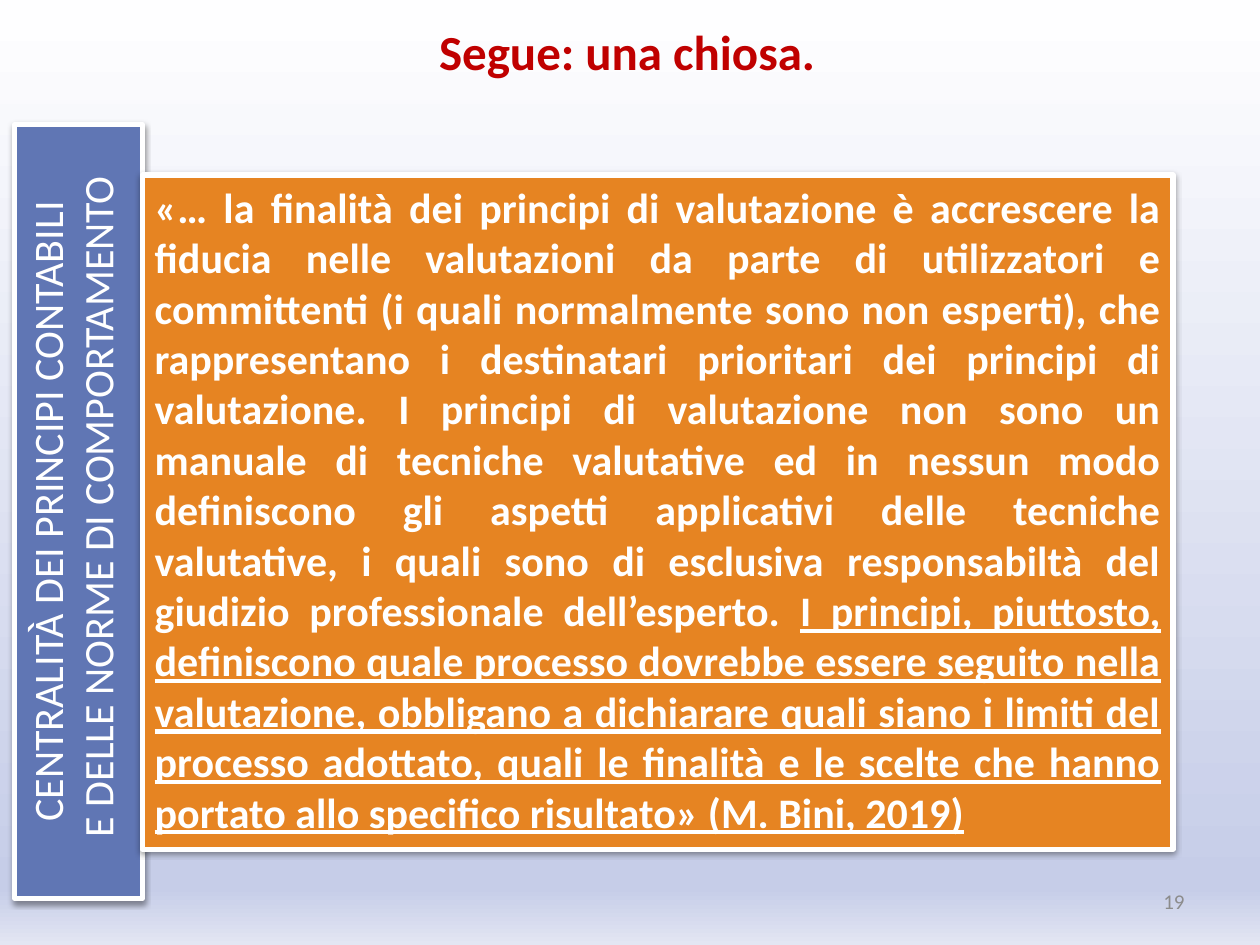
import pptx
import pptx.dml.color
import pptx.enum.shapes
import pptx.enum.text
import pptx.oxml
import pptx.oxml.ns
import pptx.util

Cm = pptx.util.Cm
Pt = pptx.util.Pt
Align = pptx.enum.text.PP_ALIGN
Anchor = pptx.enum.text.MSO_ANCHOR
Fit = pptx.enum.text.MSO_AUTO_SIZE
NS = pptx.oxml.ns.nsdecls("a")

QUOTE = (
    "«… la finalità dei principi di valutazione è accrescere la fiducia nelle "
    "valutazioni da parte di utilizzatori e committenti (i quali normalmente "
    "sono non esperti), che rappresentano i destinatari prioritari dei principi "
    "di valutazione. I principi di valutazione non sono un manuale di tecniche "
    "valutative ed in nessun modo definiscono gli aspetti applicativi delle "
    "tecniche valutative, i quali sono di esclusiva responsabiltà del giudizio "
    "professionale dell’esperto. "
)
STRESS = (
    "I principi, piuttosto, definiscono quale processo dovrebbe essere seguito "
    "nella valutazione, obbligano a dichiarare quali siano i limiti del processo "
    "adottato, quali le finalità e le scelte che hanno portato allo specifico "
    "risultato» (M. Bini, 2019)"
)


def color(code):
    return pptx.dml.color.RGBColor.from_string(code)


class Deck:
    font = "Calibri"
    white = "FFFFFF"

    def __init__(self, slide):
        self.slide = slide

    def backdrop(self, stops):
        """Fill the background from top to bottom with (percent, colour) stops."""
        fill = self.slide.background.fill
        fill.gradient()
        fill.gradient_angle = 270
        group = self.slide.element.xpath(".//p:bg//a:gsLst")[0]
        for old in list(group):
            group.remove(old)
        for place, code in stops:
            group.append(pptx.oxml.parse_xml(
                f'<a:gs {NS} pos="{place * 1000}"><a:srgbClr val="{code}"/></a:gs>'))

    def letter(self, shape, lines, size, ink, align, bold=False,
               anchor=Anchor.TOP, fit=Fit.SHAPE_TO_FIT_TEXT):
        """Set paragraphs; each line is a list of (text, underlined) runs."""
        frame = shape.text_frame
        frame.word_wrap = True
        frame.auto_size = fit
        frame.vertical_anchor = anchor
        for i, line in enumerate(lines):
            para = frame.add_paragraph() if i else frame.paragraphs[0]
            para.alignment = align
            para.font.name = self.font
            para.font.size = Pt(size)
            para.font.bold = bold
            para.font.color.rgb = color(ink)
            for text, under in line:
                run = para.add_run()
                run.text = text
                if under:
                    run.font.underline = True

    def label(self, box, text, size, ink, align, **style):
        shape = self.slide.shapes.add_textbox(*map(Cm, box))
        self.letter(shape, [[(text, False)]], size, ink, align, **style)

    def panel(self, box, fill, lines, align, bold=False, turned=False):
        shape = self.slide.shapes.add_shape(
            pptx.enum.shapes.MSO_SHAPE.RECTANGLE, *map(Cm, box))
        shape.fill.solid()
        shape.fill.fore_color.rgb = color(fill)
        shape.line.color.rgb = color(self.white)
        shape.line.width = Pt(3)
        self.shade(shape)
        self.letter(shape, lines, 24, self.white, align, bold)
        if turned:
            shape.element.xpath(".//a:bodyPr")[0].set("vert", "vert270")

    def shade(self, shape):
        """Give the shape a soft shadow straight below."""
        shape.shadow.inherit = False
        shape.element.xpath("./p:spPr/a:effectLst")[0].append(pptx.oxml.parse_xml(
            f'<a:outerShdw {NS} blurRad="{Pt(3.1)}" dist="{Pt(1.6)}" '
            'dir="5400000" rotWithShape="0"><a:srgbClr val="000000">'
            '<a:alpha val="38000"/></a:srgbClr></a:outerShdw>'))


def main():
    show = pptx.Presentation()
    show.slide_width, show.slide_height = Cm(25.4), Cm(19.05)
    deck = Deck(show.slides.add_slide(show.slide_layouts[6]))
    deck.backdrop([(1, "FEFEFF"), (94, "C6CDE8"), (100, "E3E6F3")])
    deck.label((18.21, 17.65, 5.92, 1.02), "19", 12, "8C8C8C", Align.RIGHT,
               anchor=Anchor.MIDDLE, fit=Fit.NONE)
    deck.label((0.64, 0.3, 24, 1.45), "Segue: una chiosa.", 28, "C00000",
               Align.CENTER, bold=True)
    deck.panel((0.3, 2.51, 2.57, 15.6), "6076B4",
               [[("CENTRALITÀ DEI PRINCIPI CONTABILI", False)],
                [(" E DELLE NORME DI COMPORTAMENTO", False)]],
               Align.CENTER, turned=True)
    deck.panel((2.87, 3.53, 20.78, 13.59), "E68422",
               [[(QUOTE, False), (STRESS, True)]], Align.JUSTIFY, bold=True)
    show.save("out.pptx")


if __name__ == "__main__":
    main()
